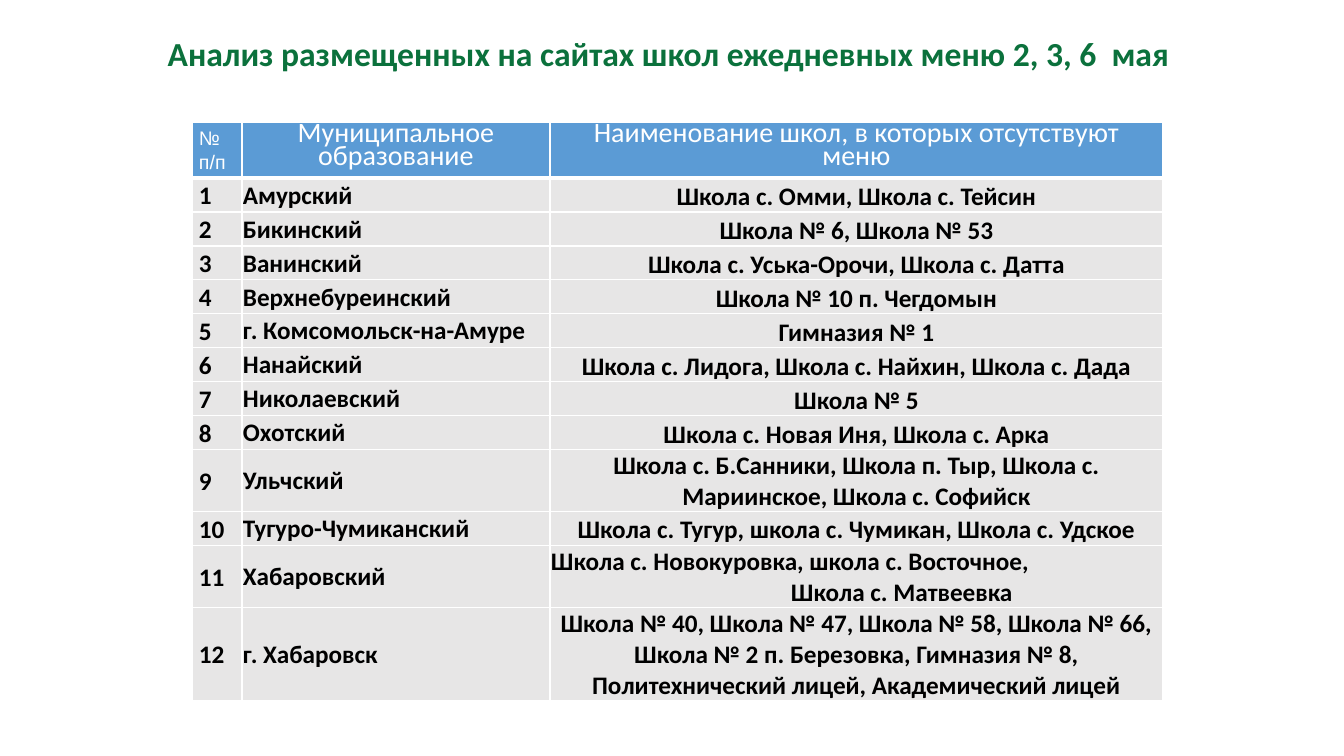
from dataclasses import dataclass

from lxml import etree
from pptx import Presentation
from pptx.dml.color import RGBColor
from pptx.enum.text import MSO_ANCHOR, MSO_AUTO_SIZE, PP_ALIGN
from pptx.oxml.ns import qn
from pptx.util import Emu, Pt

LEFT, CENTER = PP_ALIGN.LEFT, PP_ALIGN.CENTER
TOP, MIDDLE, BOTTOM = MSO_ANCHOR.TOP, MSO_ANCHOR.MIDDLE, MSO_ANCHOR.BOTTOM
GROW = MSO_AUTO_SIZE.SHAPE_TO_FIT_TEXT
TITLE_ONLY = 5
EMU_PER_PX = 914400 / 100.8
EMU_PER_POINT = 12700


@dataclass(frozen=True)
class Theme:
    green: str = "0B713C"
    blue: str = "5B9BD5"
    grey: str = "E7E6E6"
    white: str = "FFFFFF"
    black: str = "000000"
    font: str = "Calibri"
    number_font: str = "Arial"
    title_size: int = 24
    header_size: int = 20
    number_header_size: int = 14
    body_size: int = 18
    border: int = 1
    header_border: int = 3


THEME = Theme()

TITLE = "Анализ размещенных на сайтах школ ежедневных меню 2, 3, 6  мая"
HEADERS = ["№ п/п", "Муниципальное образование",
           "Наименование школ, в которых отсутствуют меню"]
SPLIT_DISTRICT = "Хабаровский"
# District, schools without a menu, number of text lines
DISTRICTS = [
    ("Амурский", "Школа с. Омми, Школа с. Тейсин", 1),
    ("Бикинский", "Школа № 6, Школа № 53", 1),
    ("Ванинский", "Школа с. Уська-Орочи, Школа с. Датта", 1),
    ("Верхнебуреинский", "Школа № 10 п. Чегдомын", 1),
    ("г. Комсомольск-на-Амуре", "Гимназия № 1", 1),
    ("Нанайский", "Школа с. Лидога, Школа с. Найхин, Школа с. Дада", 1),
    ("Николаевский", "Школа № 5", 1),
    ("Охотский", "Школа с. Новая Иня, Школа с. Арка", 1),
    ("Ульчский", "Школа с. Б.Санники, Школа п. Тыр, Школа с. "
     "Мариинское, Школа с. Софийск", 2),
    ("Тугуро-Чумиканский",
     "Школа с. Тугур, школа с. Чумикан, Школа с. Удское", 1),
    (SPLIT_DISTRICT, "Школа с. Новокуровка, школа с. Восточное,", 2),
    ("г. Хабаровск", "Школа № 40, Школа № 47, Школа № 58, Школа № 66, "
     "Школа № 2 п. Березовка, Гимназия № 8, "
     "Политехнический лицей, Академический лицей", 3),
]
SPLIT_SCHOOL = "Школа с. Матвеевка"
SPLIT_INDENT = 240

TABLE_LEFT, TABLE_TOP = 192, 122
COLUMN_WIDTHS = [50, 308, 613]
HEADER_HEIGHT = 56
ROW_HEIGHTS = {1: 34, 2: 62, 3: 93}  # by number of text lines


def px(length):
    return Emu(round(length * EMU_PER_PX))


def write_text(paragraph, text, *, size, color, font=THEME.font, bold=False,
               align=LEFT, spacing=None, indent=0):
    """Add one formatted run to a paragraph."""
    paragraph.alignment = align
    if spacing is not None:
        paragraph.line_spacing = spacing
    if indent:
        paragraph._p.get_or_add_pPr().set("marL", str(px(indent)))
    run = paragraph.add_run()
    run.text = text
    run.font.name = font
    run.font.size = Pt(size)
    run.font.bold = bold
    run.font.color.rgb = RGBColor.from_string(color)


def set_borders(cell, top, bottom):
    """Draw white lines, with top and bottom widths in points."""
    properties = cell._tc.get_or_add_tcPr()
    widths = {"lnL": THEME.border, "lnR": THEME.border,
              "lnT": top, "lnB": bottom}
    for side, width in widths.items():
        line = etree.SubElement(properties, qn(f"a:{side}"),
                                w=str(width * EMU_PER_POINT))
        fill = etree.SubElement(line, qn("a:solidFill"))
        etree.SubElement(fill, qn("a:srgbClr"), val=THEME.white)


def format_cell(cell, *, fill, anchor=MIDDLE, side=7, top=0,
                top_border=THEME.border, bottom_border=THEME.border):
    cell.vertical_anchor = anchor
    cell.margin_left = cell.margin_right = px(side)
    cell.margin_top, cell.margin_bottom = px(top), px(0)
    set_borders(cell, top_border, bottom_border)
    cell.fill.solid()
    cell.fill.fore_color.rgb = RGBColor.from_string(fill)


def add_title(slide):
    title = slide.shapes.title
    title.left, title.top = px(98), px(28)
    title.width, title.height = px(1141), px(50)
    frame = title.text_frame
    frame.word_wrap = True
    frame.auto_size = GROW
    frame.vertical_anchor = TOP
    write_text(frame.paragraphs[0], TITLE, size=THEME.title_size,
               color=THEME.green, bold=True, align=CENTER, spacing=1.0)


def fill_header(table):
    for column, text in enumerate(HEADERS):
        cell = table.cell(0, column)
        format_cell(cell, fill=THEME.blue, bottom_border=THEME.header_border)
        if column == 0:
            style = dict(size=THEME.number_header_size,
                         font=THEME.number_font, spacing=1.07)
        else:
            style = dict(size=THEME.header_size, align=CENTER,
                         spacing=Pt(16.8))
        write_text(cell.text_frame.paragraphs[0], text,
                   color=THEME.white, **style)


def fill_district(table, row, district, schools):
    body = dict(size=THEME.body_size, color=THEME.black, bold=True)
    is_split = district == SPLIT_DISTRICT
    top_border = THEME.header_border if row == 1 else THEME.border
    cell_formats = [dict(), dict(side=1, top=1),
                    dict(side=1, top=1, anchor=BOTTOM)]
    text_formats = [dict(spacing=1.07), dict(),
                    dict(align=LEFT if is_split else CENTER)]
    for column, text in enumerate((str(row), district, schools)):
        cell = table.cell(row, column)
        format_cell(cell, fill=THEME.grey, top_border=top_border,
                    **cell_formats[column])
        write_text(cell.text_frame.paragraphs[0], text,
                   **body, **text_formats[column])
    if is_split:
        write_text(table.cell(row, 2).text_frame.add_paragraph(),
                   SPLIT_SCHOOL, indent=SPLIT_INDENT, **body)


def add_school_table(slide):
    heights = [HEADER_HEIGHT] + [ROW_HEIGHTS[lines]
                                 for _, _, lines in DISTRICTS]
    table = slide.shapes.add_table(
        len(heights), len(COLUMN_WIDTHS), px(TABLE_LEFT), px(TABLE_TOP),
        px(sum(COLUMN_WIDTHS)), px(sum(heights))).table
    table.horz_banding = False
    for column, width in zip(table.columns, COLUMN_WIDTHS):
        column.width = px(width)
    for row, height in zip(table.rows, heights):
        row.height = px(height)
    fill_header(table)
    for number, (district, schools, _) in enumerate(DISTRICTS, start=1):
        fill_district(table, number, district, schools)


def main():
    presentation = Presentation()
    presentation.slide_width, presentation.slide_height = px(1344), px(756)
    slide = presentation.slides.add_slide(
        presentation.slide_layouts[TITLE_ONLY])
    add_title(slide)
    add_school_table(slide)
    presentation.save("out.pptx")


if __name__ == "__main__":
    main()
